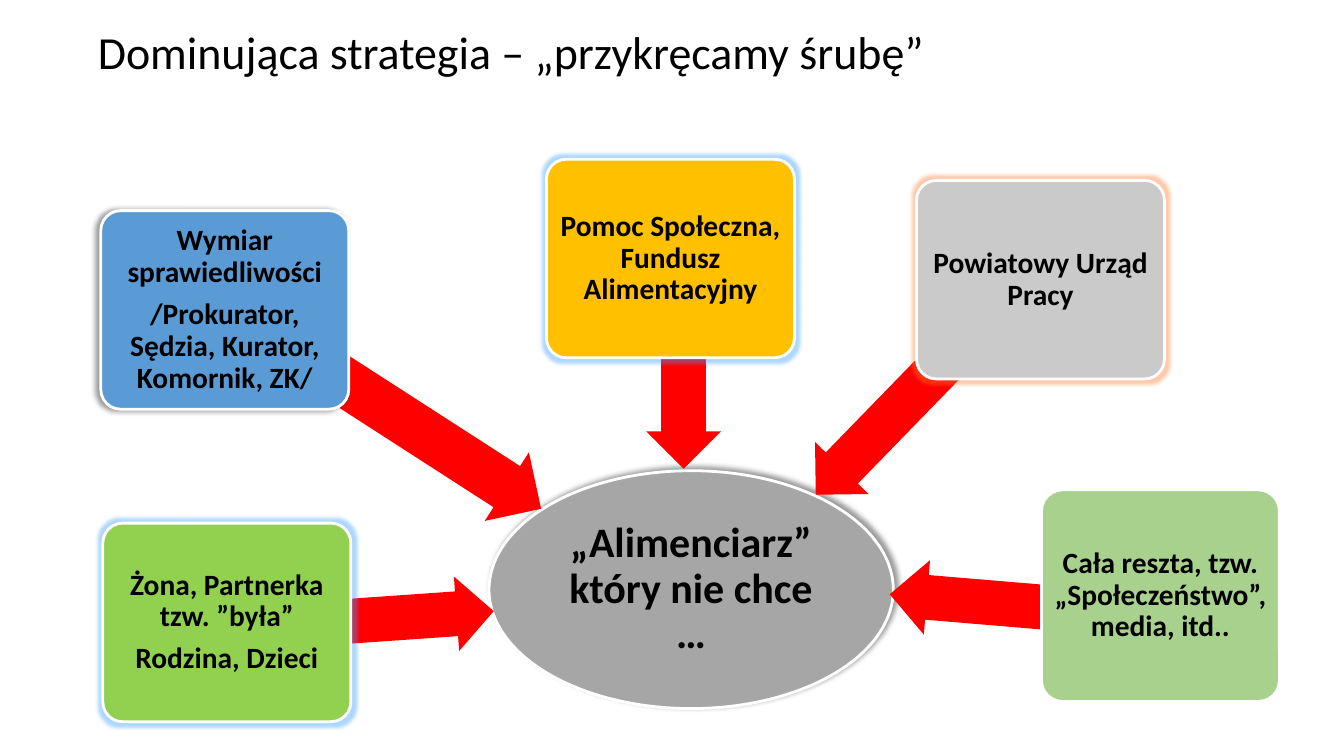
"""Build the slide on pressures converging on the maintenance debtor."""
import pptx
import pptx.util
import pptx.dml.color
import pptx.enum.shapes
import pptx.enum.text
import pptx.oxml

Inches, Pt = pptx.util.Inches, pptx.util.Pt
RGBColor = pptx.dml.color.RGBColor
SHAPE = pptx.enum.shapes.MSO_SHAPE
ALIGN = pptx.enum.text.PP_ALIGN

BLACK = RGBColor(0x00, 0x00, 0x00)
WHITE = RGBColor(0xFF, 0xFF, 0xFF)
RED = RGBColor(0xFF, 0x00, 0x00)
DARK_GREY = RGBColor(0xA6, 0xA6, 0xA6)
LIGHT_GREY = RGBColor(0xCA, 0xCA, 0xCA)
GREEN = RGBColor(0x92, 0xD0, 0x50)
PALE_GREEN = RGBColor(0xA9, 0xD1, 0x8E)
BLUE = RGBColor(0x5B, 0x9B, 0xD5)
YELLOW = RGBColor(0xFF, 0xC0, 0x00)
BLUE_GLOW = RGBColor(0x32, 0x9C, 0xFF)
ORANGE_GLOW = RGBColor(0xFF, 0x7A, 0x2C)


def write_text(holder, paragraphs, size, bold=True, align=ALIGN.CENTER, inset=0.04, after=0):
    frame = holder.text_frame
    frame.text = "\n".join(paragraphs)
    frame.word_wrap = True
    frame.auto_size = pptx.enum.text.MSO_AUTO_SIZE.NONE
    frame.vertical_anchor = pptx.enum.text.MSO_ANCHOR.MIDDLE
    frame.margin_left = frame.margin_right = Inches(inset)
    frame.margin_top = frame.margin_bottom = Inches(inset)
    for paragraph in frame.paragraphs:
        paragraph.alignment = align
        paragraph.line_spacing = 0.9
        paragraph.space_before = Pt(0)
        paragraph.space_after = Pt(after)
        for run in paragraph.runs:
            run.font.name = "Calibri"
            run.font.size = Pt(size)
            run.font.bold = bold
            run.font.color.rgb = BLACK


def draw(kind, place, fill, outlined=True, shadow_angle=None, glow=None):
    shape = slide.shapes.add_shape(kind, *(Inches(length) for length in place))
    shape.shadow.inherit = False
    shape.fill.solid()
    shape.fill.fore_color.rgb = fill
    if outlined:
        shape.line.color.rgb = WHITE
        shape.line.width = Pt(2)
    else:
        shape.line.fill.background()
    if shadow_angle is not None:
        opening = f'outerShdw blurRad="{Pt(4)}" dist="{Pt(3)}" dir="{shadow_angle * 60000}"'
        tag, colour = "outerShdw", BLACK
    elif glow is not None:
        opening, tag, colour = f'glow rad="{Pt(5)}"', "glow", glow
    else:
        return shape
    effects = shape.element.spPr.find(pptx.oxml.ns.qn("a:effectLst"))
    effects.append(pptx.oxml.parse_xml(
        f'<a:{opening} xmlns:a="http://schemas.openxmlformats.org/drawingml/2006/main">'
        f'<a:srgbClr val="{colour}"><a:alpha val="40000"/></a:srgbClr></a:{tag}>'))
    return shape


presentation = pptx.Presentation()
presentation.slide_width = Inches(13.33)
presentation.slide_height = Inches(7.5)
slide = presentation.slides.add_slide(presentation.slide_layouts[5])

title = slide.shapes.title
title.left, title.top = Inches(0.92), Inches(0.22)
title.width, title.height = Inches(11.5), Inches(0.65)
write_text(title, ["Dominująca strategia – „przykręcamy śrubę”"], 32.8,
           bold=False, align=ALIGN.LEFT, inset=0.05)

debtor = draw(SHAPE.OVAL, (4.85, 4.67, 4.01, 2.36), DARK_GREY, shadow_angle=315)
write_text(debtor, ["„Alimenciarz”", "który nie chce …"], 30, inset=0.02)

pressures = [
    (["Żona, Partnerka tzw. ”była”", "Rodzina, Dzieci"],
     (1.02, 5.19, 2.46, 1.97), GREEN, {"glow": BLUE_GLOW},
     (2.41, 5.78, 2.49, 0.74), 176),
    (["Wymiar sprawiedliwości", "/Prokurator, Sędzia, Kurator, Komornik, ZK/"],
     (1, 2.09, 2.46, 1.97), BLUE, {"shadow_angle": 180},
     (2.1, 3.68, 3.55, 0.81), 212.8),
    (["Pomoc Społeczna, Fundusz Alimentacyjny"],
     (5.42, 1.58, 2.46, 1.97), YELLOW, {"glow": BLUE_GLOW},
     (5.78, 3.28, 2, 0.74), 270),
    (["Powiatowy Urząd Pracy"],
     (9.09, 1.79, 2.46, 1.97), LIGHT_GREY, {"glow": ORANGE_GLOW},
     (7.64, 3.47, 2.98, 0.74), 314.2),
    (["Cała reszta, tzw. „Społeczeństwo”, media, itd.."],
     (10.33, 4.86, 2.36, 2.1), PALE_GREEN, {},
     (8.82, 5.63, 2.5, 0.74), 4.8),
]
for wording, source_place, colour, effect, arrow_place, angle in pressures:
    arrow = draw(SHAPE.LEFT_ARROW, arrow_place, RED, outlined=False)
    arrow.adjustments[0] = 0.6
    arrow.adjustments[1] = 0.5
    arrow.rotation = angle
    source = draw(SHAPE.ROUNDED_RECTANGLE, source_place, colour, **effect)
    source.adjustments[0] = 0.1
    write_text(source, wording, 21, after=7.35)

presentation.save("out.pptx")
